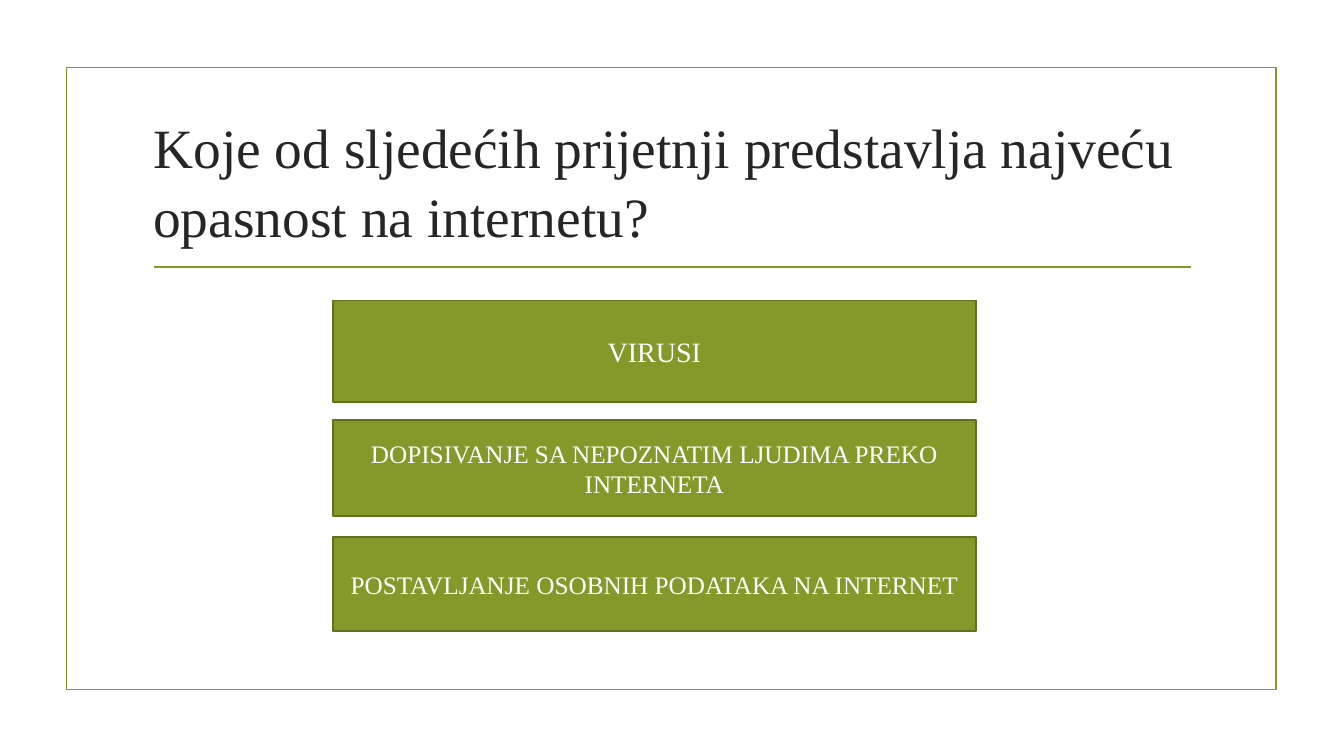
from lxml import etree
from pptx import Presentation
from pptx.dml.color import RGBColor
from pptx.enum.shapes import MSO_CONNECTOR, MSO_SHAPE
from pptx.enum.text import MSO_ANCHOR, MSO_AUTO_SIZE, PP_ALIGN
from pptx.oxml.ns import qn
from pptx.util import Inches, Pt

GREEN = RGBColor(0x83, 0x99, 0x2A)
DARK_GREEN = RGBColor(0x61, 0x71, 0x1F)
INK = RGBColor(0x26, 0x26, 0x26)
WHITE = RGBColor(0xFF, 0xFF, 0xFF)

RECTANGLE = MSO_SHAPE.RECTANGLE
PROCESS = MSO_SHAPE.FLOWCHART_PROCESS
STRAIGHT = MSO_CONNECTOR.STRAIGHT
MIDDLE = MSO_ANCHOR.MIDDLE
CENTER, LEFT = PP_ALIGN.CENTER, PP_ALIGN.LEFT
NO_AUTOFIT = MSO_AUTO_SIZE.NONE


class QuizSlide:
    font_name = "Times New Roman"
    line_width = Pt(1.25)

    def __init__(self, deck):
        self.slide = deck.slides.add_slide(deck.slide_layouts[5])

    def set_text(self, text_frame, text, size, color, align):
        text_frame.text = text
        text_frame.word_wrap = True
        text_frame.auto_size = NO_AUTOFIT
        text_frame.vertical_anchor = MIDDLE
        paragraph = text_frame.paragraphs[0]
        paragraph.alignment = align
        font = paragraph.runs[0].font
        font.name, font.size, font.color.rgb = self.font_name, Pt(size), color
        return paragraph

    def stroke(self, line, color):
        line.color.rgb = color
        line.width = self.line_width

    def title(self, text, left, top, width, height):
        question = self.slide.shapes.title
        question.left, question.top = Inches(left), Inches(top)
        question.width, question.height = Inches(width), Inches(height)
        paragraph = self.set_text(question.text_frame, text, 39.6, INK, LEFT)
        paragraph.line_spacing = 1.03

    def box(self, kind, left, top, width, height, line_color):
        shape = self.slide.shapes.add_shape(
            kind, Inches(left), Inches(top), Inches(width), Inches(height))
        shape.shadow.inherit = False
        self.stroke(shape.line, line_color)
        return shape

    def frame(self, left, top, width, height):
        self.box(RECTANGLE, left, top, width, height, GREEN).fill.background()

    def rule(self, left, right, y):
        connector = self.slide.shapes.add_connector(
            STRAIGHT, Inches(left), Inches(y), Inches(right), Inches(y))
        self.stroke(connector.line, GREEN)
        etree.SubElement(connector._element.spPr, qn("a:effectLst"))

    def answer(self, text, kind, top, height, size):
        shape = self.box(kind, 3.3, top, 6.38, height, DARK_GREEN)
        shape.fill.solid()
        shape.fill.fore_color.rgb = GREEN
        self.set_text(shape.text_frame, text, size, WHITE, CENTER)


def main():
    deck = Presentation()
    deck.slide_width, deck.slide_height = Inches(13.33), Inches(7.5)

    quiz = QuizSlide(deck)
    quiz.frame(0.66, 0.67, 12, 6.17)
    quiz.rule(1.53, 11.81, 2.65)
    quiz.title("Koje od sljedećih prijetnji predstavlja najveću opasnost na internetu?",
               1.42, 1.07, 10.5, 1.43)

    answers = [
        ("VIRUSI", PROCESS, 2.98, 1.01, 20),
        ("DOPISIVANJE SA NEPOZNATIM LJUDIMA PREKO INTERNETA", PROCESS, 4.17, 0.95, 18),
        ("POSTAVLJANJE OSOBNIH PODATAKA NA INTERNET", RECTANGLE, 5.33, 0.93, 18),
    ]
    for answer in answers:
        quiz.answer(*answer)

    deck.save("out.pptx")


if __name__ == "__main__":
    main()
